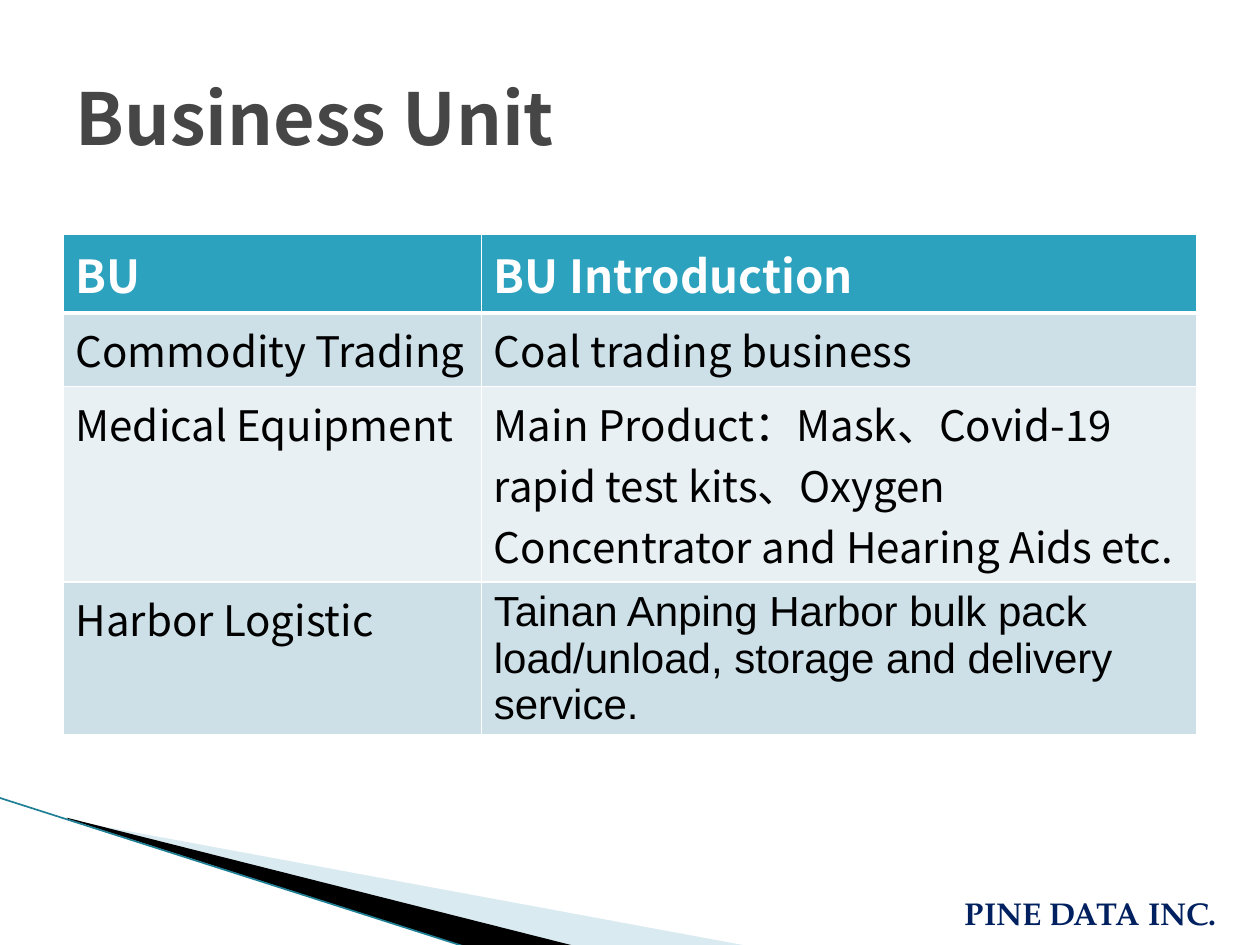
from typing import NamedTuple

from lxml import etree
from pptx import Presentation
from pptx.dml.color import RGBColor
from pptx.enum.shapes import MSO_CONNECTOR
from pptx.enum.text import MSO_ANCHOR, MSO_AUTO_SIZE, PP_ALIGN
from pptx.oxml.ns import qn
from pptx.util import Inches, Pt

TOP, MIDDLE = MSO_ANCHOR.TOP, MSO_ANCHOR.MIDDLE
LEFT = PP_ALIGN.LEFT
FIT_SHAPE = MSO_AUTO_SIZE.SHAPE_TO_FIT_TEXT
STRAIGHT = MSO_CONNECTOR.STRAIGHT

SANS = "Noto Sans CJK SC"
ARIAL = "Arial"
SERIF = "TeX Gyre Pagella"
WHITE = "FFFFFF"
BLACK = "000000"
HEADER_FILL = "2DA2BF"
BAND_FILLS = ("CDE0E8", "E8F0F4")
COLUMN_WIDTHS = (3.32, 5.68)


class Wedge(NamedTuple):
    points: tuple
    color: str
    opacity: int


class Unit(NamedTuple):
    name: str
    introduction: str
    height: float
    font: str = SANS


WEDGES = (
    Wedge(((0.55, 6.51), (5.95, 7.51), (4.56, 7.51), (0.55, 6.5)), "A0CBDC", 40),
    Wedge(((0.53, 6.49), (4.57, 7.51), (3.72, 7.52), (0.54, 6.5)), BLACK, 100),
)
HEADER = Unit("BU", "BU Introduction", 0.62)
UNITS = (
    Unit("Commodity Trading", "Coal trading business", 0.58),
    Unit("Medical Equipment",
         "Main Product：Mask、Covid-19 rapid test kits、Oxygen Concentrator "
         "and Hearing Aids etc.", 1.55),
    Unit("Harbor Logistic",
         "Tainan Anping Harbor bulk pack load/unload, storage and delivery service.",
         1.2, ARIAL),
)


def rgb(color: str) -> RGBColor:
    return RGBColor.from_string(color)


def write(frame, text: str, *, size: float, font: str = SANS,
          color: str = BLACK, bold: bool = False) -> None:
    paragraph = frame.paragraphs[0]
    paragraph.alignment = LEFT
    run = paragraph.add_run()
    run.text = text
    run.font.size = Pt(size)
    run.font.name = font
    run.font.bold = bold
    run.font.color.rgb = rgb(color)
    east_asian = etree.Element(qn("a:ea"), typeface=font)
    run.font._element.find(qn("a:latin")).addnext(east_asian)


def draw_wedge(shapes, wedge: Wedge) -> None:
    points = [(Inches(x), Inches(y)) for x, y in wedge.points]
    builder = shapes.build_freeform(*points[0])
    builder.add_line_segments(points[1:], close=True)
    shape = builder.convert_to_shape()
    shape.shadow.inherit = False
    shape.line.fill.background()
    shape.fill.solid()
    shape.fill.fore_color.rgb = rgb(wedge.color)
    if wedge.opacity < 100:
        fill_color = shape._element.spPr.find(".//" + qn("a:srgbClr"))
        etree.SubElement(fill_color, qn("a:alpha"), val=str(wedge.opacity * 1000))


def draw_edge(shapes) -> None:
    """Draw the thin line along the lower side of the wedges."""
    edge = shapes.add_connector(
        STRAIGHT, Inches(-0.01), Inches(6.33), Inches(3.71), Inches(7.52))
    edge.line.color.rgb = rgb("1F7F95")
    edge.line.width = Pt(0.95)
    etree.SubElement(edge._element.spPr, qn("a:effectLst"))


def set_borders(cell, bottom: float, top: float) -> None:
    properties = cell._tc.get_or_add_tcPr()
    widths = {"lnL": 1, "lnR": 1, "lnT": top, "lnB": bottom}
    for position, (side, width) in enumerate(widths.items()):
        border = etree.Element(qn(f"a:{side}"), w=str(Pt(width)))
        fill = etree.SubElement(border, qn("a:solidFill"))
        etree.SubElement(fill, qn("a:srgbClr"), val=WHITE)
        properties.insert(position, border)


def draw_units(shapes) -> None:
    rows = (HEADER, *UNITS)
    table = shapes.add_table(
        len(rows), len(COLUMN_WIDTHS), Inches(0.5), Inches(1.86),
        Inches(sum(COLUMN_WIDTHS)), Inches(sum(row.height for row in rows))).table
    for column, width in zip(table.columns, COLUMN_WIDTHS):
        column.width = Inches(width)
    for index, unit in enumerate(rows):
        table.rows[index].height = Inches(unit.height)
        is_header = index == 0
        fill = HEADER_FILL if is_header else BAND_FILLS[(index - 1) % 2]
        texts = ((unit.name, SANS), (unit.introduction, unit.font))
        for column, (text, font) in enumerate(texts):
            cell = table.cell(index, column)
            cell.fill.solid()
            cell.fill.fore_color.rgb = rgb(fill)
            cell.vertical_anchor = MIDDLE if column and not is_header else TOP
            set_borders(cell, bottom=3 if is_header else 1, top=3 if index == 1 else 1)
            write(cell.text_frame, text, font=font, size=26 if is_header else 24,
                  color=WHITE if is_header else BLACK, bold=is_header)


def place_title(title) -> None:
    title.left, title.top = Inches(0.5), Inches(0.3)
    title.width, title.height = Inches(9), Inches(1.25)
    title.text_frame.vertical_anchor = MIDDLE
    write(title.text_frame, "Business Unit", size=41, color="464646", bold=True)


def draw_company(shapes) -> None:
    company = shapes.add_textbox(Inches(7.56), Inches(7.05), Inches(2.37), Inches(0.4))
    company.text_frame.word_wrap = False
    company.text_frame.auto_size = FIT_SHAPE
    write(company.text_frame, "PINE DATA INC.", size=18, font=SERIF,
          color="002060", bold=True)


def main() -> None:
    presentation = Presentation()
    presentation.slide_width, presentation.slide_height = Inches(10), Inches(7.5)
    slide = presentation.slides.add_slide(presentation.slide_layouts[5])
    for wedge in WEDGES:
        draw_wedge(slide.shapes, wedge)
    draw_edge(slide.shapes)
    draw_units(slide.shapes)
    place_title(slide.shapes.title)
    draw_company(slide.shapes)
    presentation.save("out.pptx")


if __name__ == "__main__":
    main()
